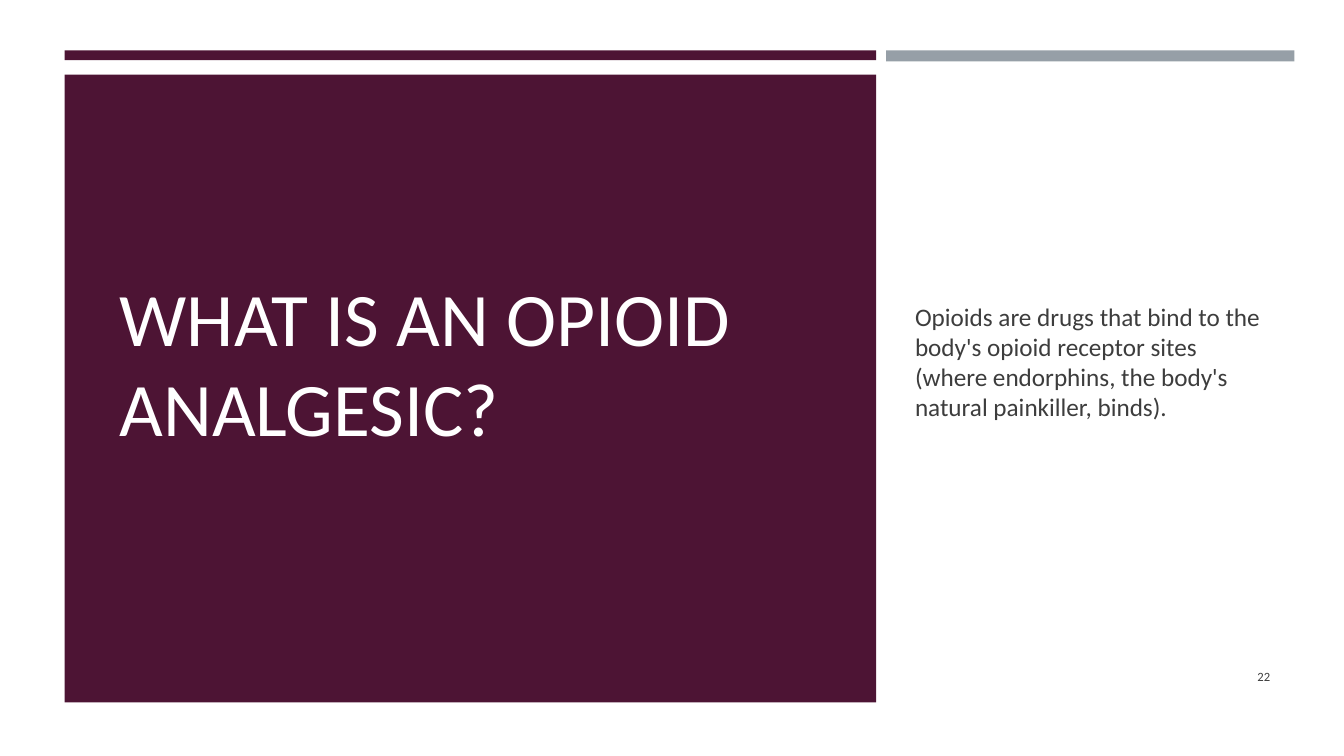
from dataclasses import dataclass

import pptx
import pptx.dml.color
import pptx.enum.shapes
import pptx.enum.text
import pptx.shapes.autoshape
import pptx.slide
import pptx.util

Cm = pptx.util.Cm
Pt = pptx.util.Pt
Align = pptx.enum.text.PP_ALIGN

FONT = "Calibri"
PLUM = "4D1434"
GREY = "969FA7"
WHITE = "FFFFFF"
CHARCOAL = "3D3D3D"

PANEL_LEFT, PANEL_WIDTH = 1.63, 20.45
BAR_TOP = 1.27
TEXT_TOP, TEXT_HEIGHT = 2.41, 13.39


@dataclass(frozen=True)
class Frame:
    left: float
    top: float
    width: float
    height: float

    def lengths(self) -> tuple[pptx.util.Length, ...]:
        return Cm(self.left), Cm(self.top), Cm(self.width), Cm(self.height)


@dataclass(frozen=True)
class Block:
    frame: Frame
    color: str


@dataclass(frozen=True)
class Caption:
    frame: Frame
    text: str
    size: float
    color: str
    align: Align = Align.LEFT
    before: float = 0
    after: float = 0


BLOCKS = (
    Block(Frame(PANEL_LEFT, BAR_TOP, PANEL_WIDTH, 0.25), PLUM),
    Block(Frame(22.33, BAR_TOP, 10.29, 0.28), GREY),
    Block(Frame(PANEL_LEFT, 1.88, PANEL_WIDTH, 15.82), PLUM),
)

CAPTIONS = (
    Caption(
        Frame(2.77, TEXT_TOP, 18.29, TEXT_HEIGHT),
        "WHAT IS AN OPIOID ANALGESIC?",
        54,
        WHITE,
    ),
    Caption(
        Frame(22.81, TEXT_TOP, 9.45, TEXT_HEIGHT),
        "Opioids are drugs that bind to the body's opioid receptor sites "
        "(where endorphins, the body's natural painkiller, binds).",
        18,
        CHARCOAL,
        before=3.6,
        after=6,
    ),
    Caption(Frame(29.34, 16.54, 2.92, 1.02), "22", 9, CHARCOAL, Align.RIGHT, after=6),
)


def rgb(value: str) -> pptx.dml.color.RGBColor:
    return pptx.dml.color.RGBColor.from_string(value)


def draw_block(page: pptx.slide.Slide, block: Block) -> None:
    shape = page.shapes.add_shape(
        pptx.enum.shapes.MSO_SHAPE.RECTANGLE, *block.frame.lengths()
    )
    shape.shadow.inherit = False
    shape.fill.solid()
    shape.fill.fore_color.rgb = rgb(block.color)
    shape.line.fill.background()


def draw_caption(page: pptx.slide.Slide, caption: Caption) -> None:
    box = page.shapes.add_textbox(*caption.frame.lengths())
    box.text_frame.word_wrap = True
    box.text_frame.vertical_anchor = pptx.enum.text.MSO_ANCHOR.MIDDLE
    para = box.text_frame.paragraphs[0]
    para.alignment = caption.align
    para.space_before = Pt(caption.before)
    para.space_after = Pt(caption.after)
    span = para.add_run()
    span.text = caption.text
    span.font.name = FONT
    span.font.size = Pt(caption.size)
    span.font.color.rgb = rgb(caption.color)


def main() -> None:
    deck = pptx.Presentation()
    deck.slide_width = Cm(33.87)
    deck.slide_height = Cm(19.05)
    page = deck.slides.add_slide(deck.slide_layouts[6])
    page.background.fill.solid()
    page.background.fill.fore_color.rgb = rgb(WHITE)
    for block in BLOCKS:
        draw_block(page, block)
    for caption in CAPTIONS:
        draw_caption(page, caption)
    deck.save("out.pptx")


if __name__ == "__main__":
    main()
